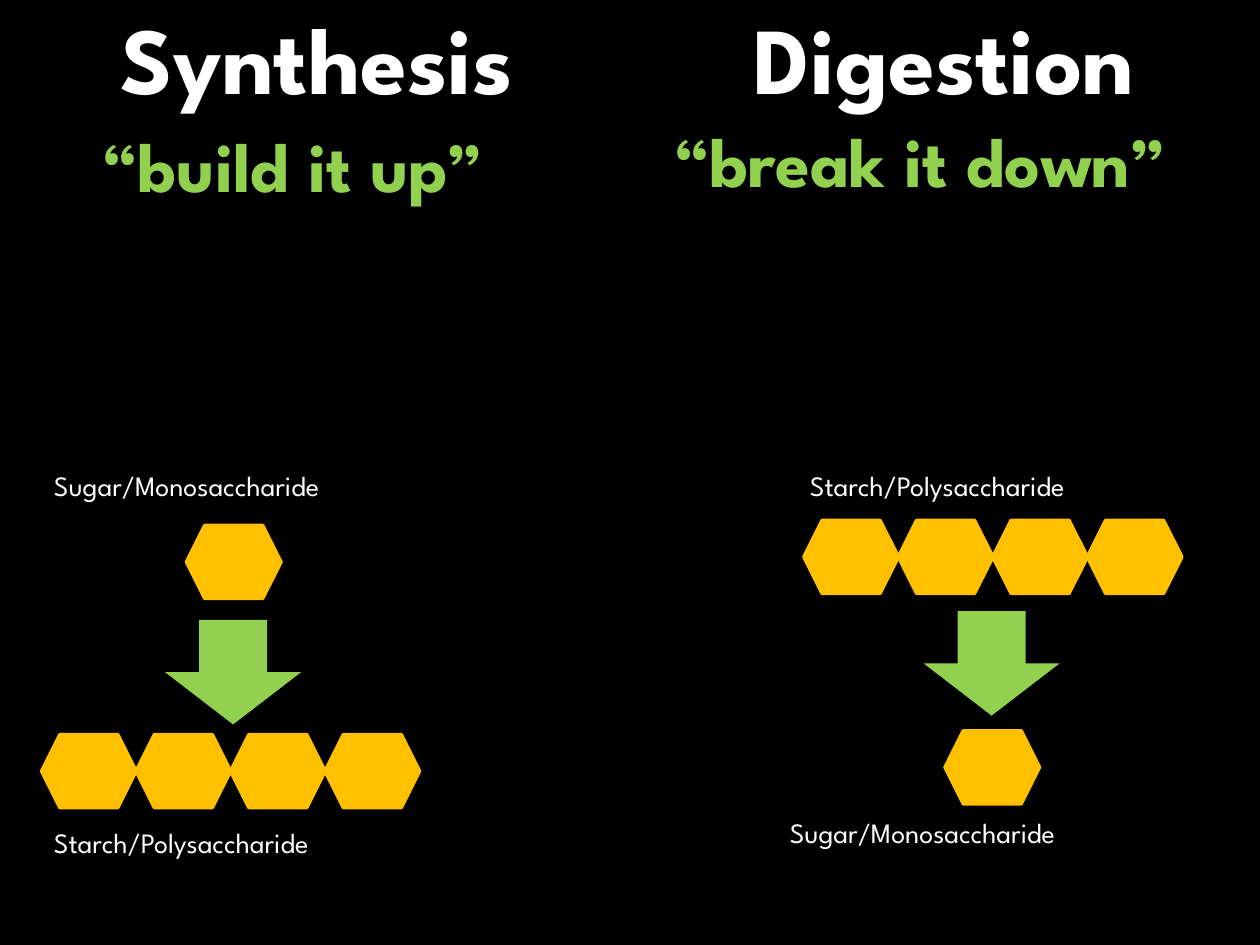
import pptx
import pptx.dml.color
import pptx.enum.shapes
import pptx.enum.text
import pptx.util

Inches = pptx.util.Inches
Pt = pptx.util.Pt
RGBColor = pptx.dml.color.RGBColor
MSO_SHAPE = pptx.enum.shapes.MSO_SHAPE
PP_ALIGN = pptx.enum.text.PP_ALIGN
MSO_ANCHOR = pptx.enum.text.MSO_ANCHOR
MSO_AUTO_SIZE = pptx.enum.text.MSO_AUTO_SIZE

BLACK = RGBColor(0x00, 0x00, 0x00)
WHITE = RGBColor(0xFF, 0xFF, 0xFF)
GREEN = RGBColor(0x92, 0xD0, 0x50)
GOLD = RGBColor(0xFF, 0xC0, 0x00)

FONT = "League Spartan"
TITLE_FONT = {"name": FONT, "size": Pt(54), "bold": True}
MOTTO_FONT = {"name": FONT, "size": Pt(40), "bold": True}
LABEL_FONT = {"name": FONT, "size": Pt(16), "bold": False}

TITLE_FRAME = {"vertical_anchor": MSO_ANCHOR.BOTTOM, "auto_size": MSO_AUTO_SIZE.NONE}
GROWING_FRAME = {"auto_size": MSO_AUTO_SIZE.SHAPE_TO_FIT_TEXT}

SUGAR_WIDTH = 0.75
SUGAR_HEIGHT = 0.58
CHAIN_LENGTH = 4


def set_attributes(target, values):
    for name, value in values.items():
        setattr(target, name, value)


def add_text(slide, words, box, font, color, frame, alignment=PP_ALIGN.LEFT):
    text_frame = slide.shapes.add_textbox(*map(Inches, box)).text_frame
    text_frame.word_wrap = True
    set_attributes(text_frame, frame)
    paragraph = text_frame.paragraphs[0]
    paragraph.alignment = alignment
    run = paragraph.add_run()
    run.text = words
    set_attributes(run.font, font)
    run.font.color.rgb = color


def add_title(slide, words, left, width):
    add_text(slide, words, (left, 0.25, width, 0.7), TITLE_FONT, WHITE,
             TITLE_FRAME, PP_ALIGN.CENTER)


def add_motto(slide, words, left, top, width):
    add_text(slide, words, (left, top, width, 0.77), MOTTO_FONT, GREEN, GROWING_FRAME)


def add_label(slide, words, left, top):
    add_text(slide, words, (left, top, 3.17, 0.37), LABEL_FONT, WHITE, GROWING_FRAME)


def add_solid(slide, preset, box, color):
    solid = slide.shapes.add_shape(preset, *map(Inches, box))
    solid.shadow.inherit = False
    solid.fill.solid()
    solid.fill.fore_color.rgb = color
    return solid


def add_sugar(slide, left, top):
    sugar = add_solid(slide, MSO_SHAPE.HEXAGON,
                      (left, top, SUGAR_WIDTH, SUGAR_HEIGHT), GOLD)
    sugar.line.color.rgb = GOLD
    sugar.line.width = Pt(2)


def add_starch(slide, left, top):
    for position in range(CHAIN_LENGTH):
        add_sugar(slide, left + position * SUGAR_WIDTH, top)


def add_reaction_arrow(slide, left, top):
    arrow = add_solid(slide, MSO_SHAPE.DOWN_ARROW, (left, top, 1.08, 0.83), GREEN)
    arrow.line.fill.background()


def add_synthesis(slide):
    add_title(slide, "Synthesis\t", 0.5, 4.42)
    add_motto(slide, "“build it up”", 0.71, 0.92, 3.54)
    add_label(slide, "Sugar/Monosaccharide", 0.33, 3.67)
    add_sugar(slide, 1.48, 4.17)
    add_reaction_arrow(slide, 1.31, 4.92)
    add_starch(slide, 0.33, 5.83)
    add_label(slide, "Starch/Polysaccharide", 0.33, 6.5)


def add_digestion(slide):
    add_title(slide, "Digestion", 5.08, 4.83)
    add_motto(slide, "“break it down”", 5.25, 0.88, 4.5)
    add_label(slide, "Starch/Polysaccharide", 6.33, 3.67)
    add_starch(slide, 6.38, 4.13)
    add_reaction_arrow(slide, 7.33, 4.85)
    add_sugar(slide, 7.5, 5.8)
    add_label(slide, "Sugar/Monosaccharide", 6.17, 6.42)


def main():
    presentation = pptx.Presentation()
    presentation.slide_width = Inches(10)
    presentation.slide_height = Inches(7.5)
    slide = presentation.slides.add_slide(presentation.slide_layouts[6])
    slide.background.fill.solid()
    slide.background.fill.fore_color.rgb = BLACK
    add_synthesis(slide)
    add_digestion(slide)
    presentation.save("out.pptx")


if __name__ == "__main__":
    main()
